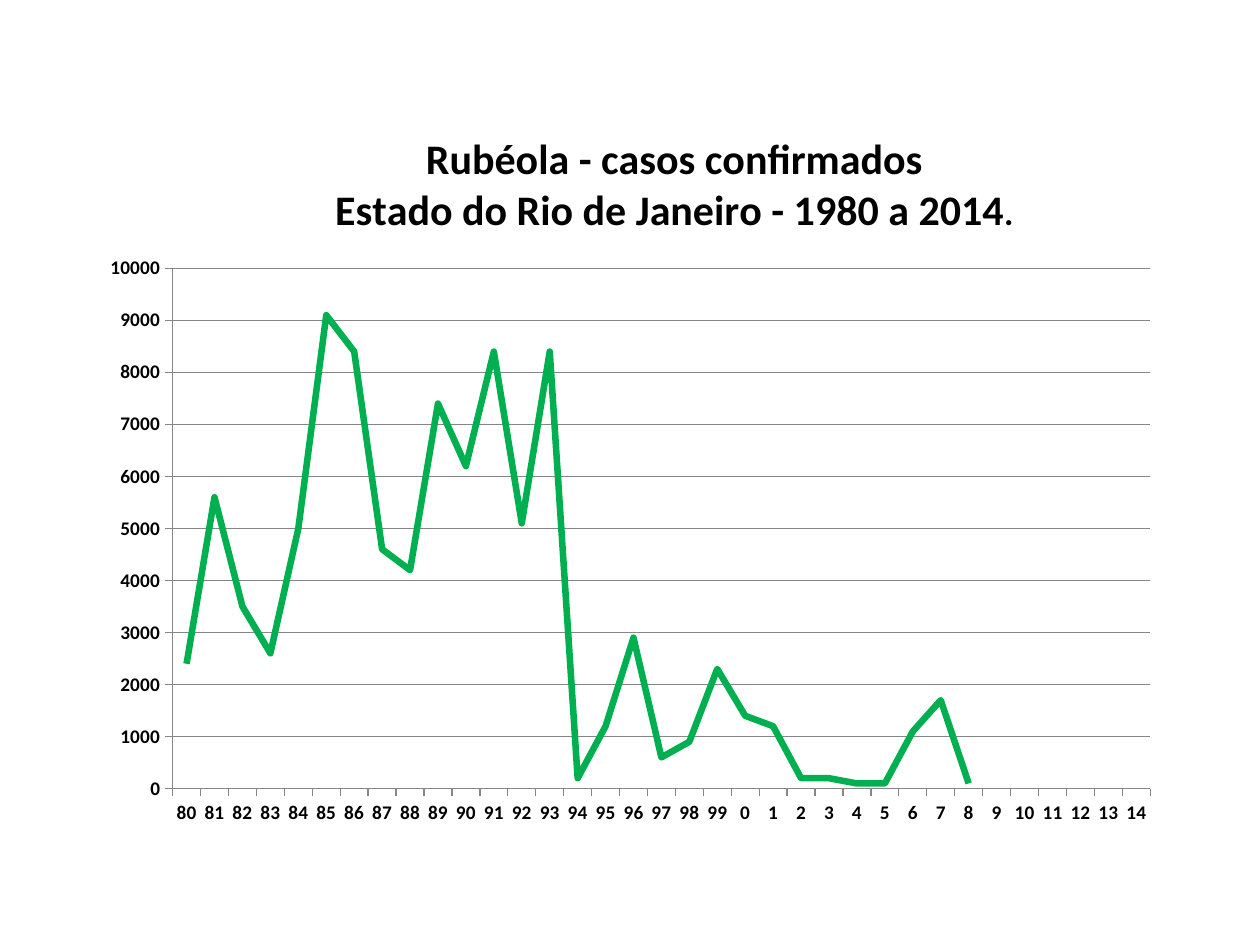
from lxml import etree
from pptx import Presentation
from pptx.chart.data import CategoryChartData
from pptx.dml.color import RGBColor
from pptx.enum.chart import XL_CHART_TYPE as ChartType, XL_MARKER_STYLE as Marker
from pptx.enum.chart import XL_TICK_MARK as Tick
from pptx.oxml.ns import qn
from pptx.util import Inches, Pt

TITLE = ["Rubéola - casos confirmados", "Estado do Rio de Janeiro - 1980 a 2014"]
YEARS = [str(year % 100) for year in range(1980, 2015)]
CASES = [2400, 5600, 3500, 2600, 5000, 9100, 8400, 4600, 4200, 7400,
         6200, 8400, 5100, 8400, 200, 1200, 2900, 600, 900, 2300,
         1400, 1200, 200, 200, 100, 100, 1100, 1700, 100]
CHART_BOX = (0.7, 0.84, 8.6, 5.82)


def rgb(hex_color):
    return RGBColor.from_string(hex_color)


def set_layout(parent, index, x, y, w=None, h=None):
    """Place a chart part, given its slide position in inches."""
    left, top, width, height = CHART_BOX
    values = {"xMode": "edge", "yMode": "edge",
              "x": (x - left) / width, "y": (y - top) / height}
    if w and h:
        values = {"layoutTarget": "inner", **values, "w": w / width, "h": h / height}
    for old in parent.findall(qn("c:layout")):
        parent.remove(old)
    layout = etree.Element(qn("c:layout"))
    manual = etree.SubElement(layout, qn("c:manualLayout"))
    for name, value in values.items():
        etree.SubElement(manual, qn(f"c:{name}")).set("val", str(value))
    parent.insert(index, layout)


class Deck:
    font, text, green, grey = "Calibri", "000000", "00B050", "868686"

    def __init__(self):
        self.prs = Presentation()
        self.prs.slide_width, self.prs.slide_height = Inches(10), Inches(7.5)
        self.s = self.prs.slides.add_slide(self.prs.slide_layouts[6])

    def style(self, font, size, bold=True):
        font.name, font.size, font.bold = self.font, Pt(size), bold
        font.color.rgb = rgb(self.text)

    def line_chart(self, box, categories, values):
        data = CategoryChartData()
        data.categories = categories
        data.add_series("Series 1", values + [None] * (len(categories) - len(values)))
        chart = self.s.shapes.add_chart(ChartType.LINE, *map(Inches, box), data).chart
        chart.has_legend = False
        self.style(chart.font, 10, False)
        plot = chart.plots[0]
        plot.vary_by_categories = False
        series = plot.series[0]
        series.smooth = False
        series.marker.style = Marker.NONE
        series.format.line.color.rgb = rgb(self.green)
        series.format.line.width = Pt(3.75)
        return chart

    def axis(self, axis):
        axis.major_tick_mark, axis.minor_tick_mark = Tick.OUTSIDE, Tick.NONE
        axis.format.line.color.rgb = rgb(self.grey)
        self.style(axis.tick_labels.font, 11)

    def chart_title(self, chart, lines, ending):
        tf = chart.chart_title.text_frame
        for i, line in enumerate(lines):
            p = tf.paragraphs[0] if i == 0 else tf.add_paragraph()
            self.style(p.font, 24)
            r = p.add_run()
            r.text = line
            self.style(r.font, 24)
        r = p.add_run()
        r.text = ending
        self.style(r.font, 20)


def main():
    deck = Deck()

    # Line of confirmed cases
    chart = deck.line_chart(CHART_BOX, YEARS, CASES)

    # Axes and gridlines
    deck.axis(chart.category_axis)
    values = chart.value_axis
    deck.axis(values)
    values.minimum_scale, values.maximum_scale, values.major_unit = 0, 10000, 1000
    values.has_major_gridlines = True
    values.major_gridlines.format.line.color.rgb = rgb(deck.grey)
    values.tick_labels.number_format = "0"
    values.tick_labels.number_format_is_linked = False

    # Title
    deck.chart_title(chart, TITLE, ".")

    # Placement of title and plot
    set_layout(chart.chart_title._element, 1, 2.63, 1.02)
    set_layout(chart.plots[0]._element.getparent(), 0, 1.37, 2.13, 7.76, 4.13)

    deck.prs.save("out.pptx")


if __name__ == "__main__":
    main()
